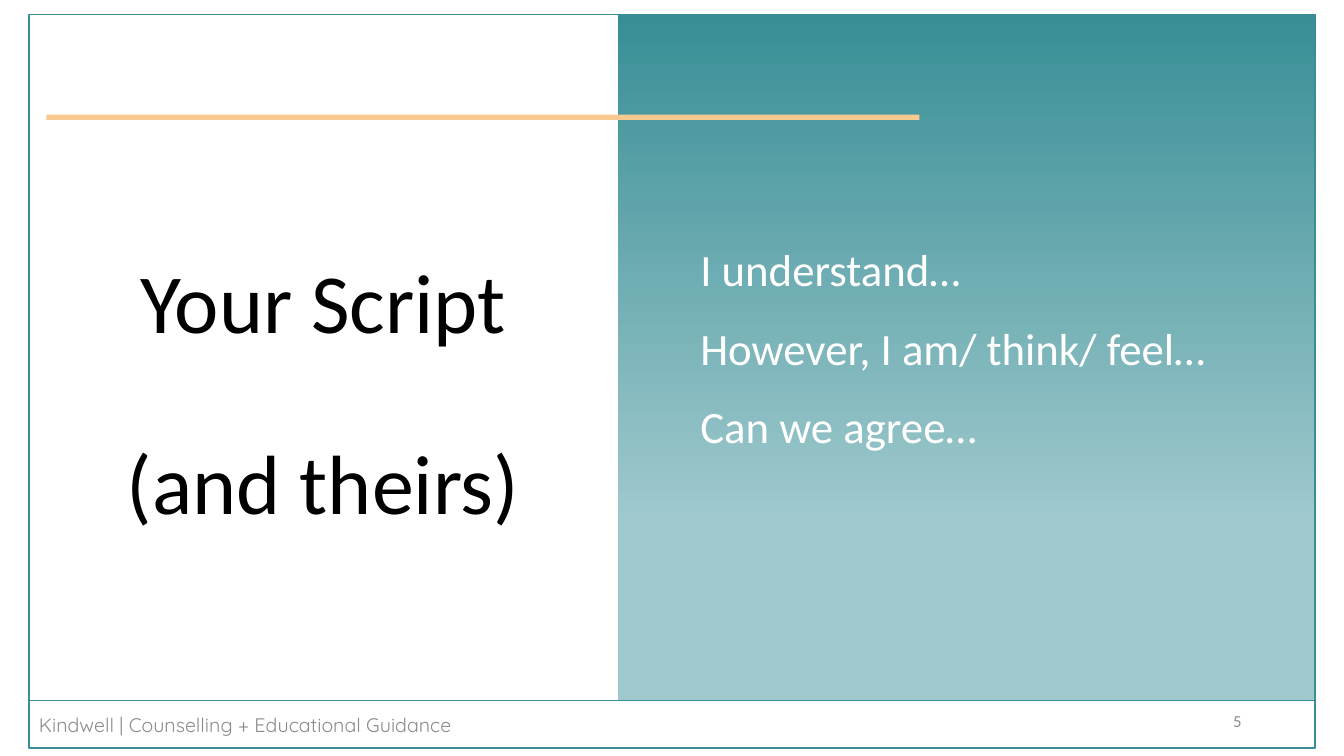
from copy import deepcopy
from dataclasses import dataclass

from pptx import Presentation
from pptx.dml.color import RGBColor
from pptx.enum.shapes import MSO_SHAPE
from pptx.enum.text import MSO_ANCHOR, MSO_AUTO_SIZE, PP_ALIGN
from pptx.shapes.autoshape import Shape
from pptx.slide import Slide
from pptx.text.text import TextFrame
from pptx.util import Cm, Pt

TEAL = RGBColor(0x39, 0x8E, 0x96)
PALE_TEAL = RGBColor(0x9F, 0xC9, 0xCD)
PEACH = RGBColor(0xF8, 0xCA, 0x90)
GREY = RGBColor(0x8C, 0x8C, 0x8C)
BLACK = RGBColor(0, 0, 0)
WHITE = RGBColor(0xFF, 0xFF, 0xFF)


@dataclass(frozen=True)
class Box:
    left: float
    top: float
    width: float
    height: float

    def lengths(self) -> tuple[Cm, Cm, Cm, Cm]:
        return Cm(self.left), Cm(self.top), Cm(self.width), Cm(self.height)


@dataclass(frozen=True)
class TextStyle:
    size: float
    color: RGBColor
    font: str = "Calibri"
    align: PP_ALIGN = PP_ALIGN.LEFT
    anchor: MSO_ANCHOR = MSO_ANCHOR.MIDDLE
    line_spacing: float = 1.0
    first_gap: float = 0
    gap: float = 0


FRAME = Box(0.73, 0.37, 32.41, 17.29)
FOOTER = Box(0.73, 17.66, 32.41, 1.19)
PANEL = Box(15.57, 0.37, 17.57, 17.29)
ACCENT = Box(1.17, 2.89, 22.0, 0.13)
TITLE = Box(0.98, 4.46, 14.33, 11.07)
BODY = Box(17.4, 3.99, 14.15, 13.16)
PAGE_NUMBER = Box(23.92, 17.66, 7.62, 1.01)

TITLE_STYLE = TextStyle(60, BLACK, align=PP_ALIGN.CENTER, line_spacing=0.9, gap=64)
BODY_STYLE = TextStyle(32, WHITE, anchor=MSO_ANCHOR.TOP, line_spacing=1.2,
                       first_gap=10, gap=10)
FOOTER_STYLE = TextStyle(14, GREY, font="Quicksand")
NUMBER_STYLE = TextStyle(12, GREY, align=PP_ALIGN.RIGHT)


def add_rect(s: Slide, box: Box, fill: RGBColor | None = None,
             line: RGBColor | None = None) -> Shape:
    sp = s.shapes.add_shape(MSO_SHAPE.RECTANGLE, *box.lengths())
    sp.shadow.inherit = False
    if fill is None:
        sp.fill.background()
    else:
        sp.fill.solid()
        sp.fill.fore_color.rgb = fill
    if line is None:
        sp.line.fill.background()
    else:
        sp.line.color.rgb = line
        sp.line.width = Pt(1)
    return sp


def fade_down(sp: Shape, start: RGBColor, end: RGBColor, reach: float) -> None:
    sp.fill.gradient()
    sp.fill.gradient_angle = 270
    first, last = sp.fill.gradient_stops
    first.color.rgb, first.position = start, 0
    last.color.rgb, last.position = end, reach
    # Hold the end colour down to the bottom edge
    stop = sp._element.spPr.xpath("a:gradFill/a:gsLst/a:gs")[-1]
    bottom = deepcopy(stop)
    bottom.set("pos", "100000")
    stop.addnext(bottom)


def write(tf: TextFrame, lines: list[str], style: TextStyle) -> None:
    tf.word_wrap = True
    tf.auto_size = MSO_AUTO_SIZE.NONE
    tf.vertical_anchor = style.anchor
    for i, line in enumerate(lines):
        p = tf.add_paragraph() if i else tf.paragraphs[0]
        p.alignment = style.align
        p.line_spacing = style.line_spacing
        p.space_before = Pt(style.gap if i else style.first_gap)
        r = p.add_run()
        r.text = line
        r.font.name = style.font
        r.font.size = Pt(style.size)
        r.font.color.rgb = style.color


def main() -> None:
    prs = Presentation()
    prs.slide_width, prs.slide_height = Cm(33.87), Cm(19.05)
    s = prs.slides.add_slide(prs.slide_layouts[5])

    # Panel, footer and frame
    fade_down(add_rect(s, PANEL), TEAL, PALE_TEAL, 0.74)
    footer = add_rect(s, FOOTER, line=TEAL)
    write(footer.text_frame, ["Kindwell | Counselling + Educational Guidance"], FOOTER_STYLE)
    number = s.shapes.add_textbox(*PAGE_NUMBER.lengths())
    write(number.text_frame, ["5"], NUMBER_STYLE)
    add_rect(s, FRAME, line=TEAL)
    add_rect(s, ACCENT, fill=PEACH)

    # Title
    title = s.shapes.title
    title.left, title.top, title.width, title.height = TITLE.lengths()
    write(title.text_frame, ["Your Script", "(and theirs)"], TITLE_STYLE)

    # Script prompts
    body = s.shapes.add_textbox(*BODY.lengths())
    body.text_frame.margin_top = Cm(1.83)
    write(body.text_frame,
          ["I understand…", "However, I am/ think/ feel…", "Can we agree…"], BODY_STYLE)

    prs.save("out.pptx")


if __name__ == "__main__":
    main()
